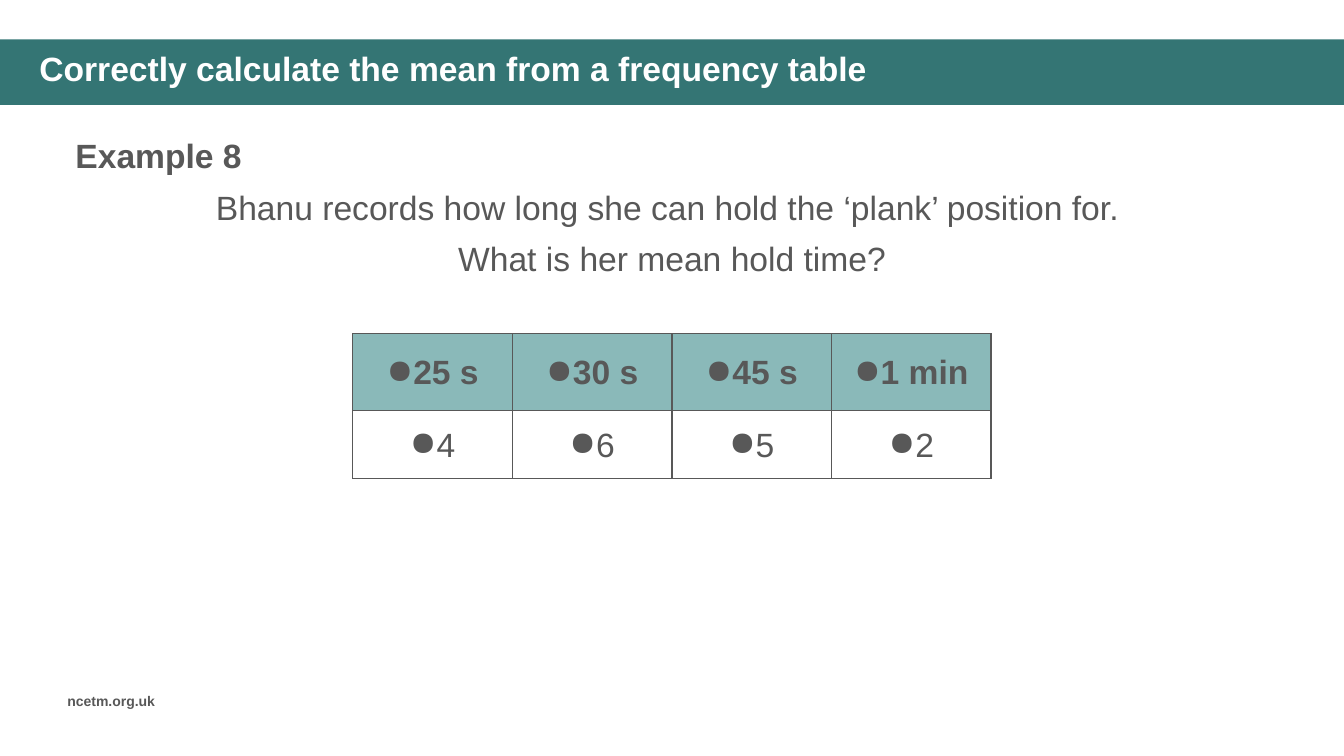
import pptx
import pptx.dml.color
import pptx.enum.shapes
import pptx.enum.text
import pptx.oxml.ns
import pptx.util
from lxml import etree
from pptx.util import Inches

TEAL = "347574"
PALE_TEAL = "8AB9B9"
GREY = "585858"
WHITE = "FFFFFF"
CENTER = pptx.enum.text.PP_ALIGN.CENTER
MIDDLE = pptx.enum.text.MSO_ANCHOR.MIDDLE
HOLD_TIMES = ["25\u00a0s", "30\u00a0s", "45\u00a0s", "1\u00a0min"]
FREQUENCIES = ["4", "6", "5", "2"]


def color(value):
    return pptx.dml.color.RGBColor.from_string(value)


def fill(target, value):
    target.fill.solid()
    target.fill.fore_color.rgb = color(value)


def style(paragraph, size=24, bold=False, value=GREY):
    font = paragraph.font
    font.name = "Arial"
    font.size = pptx.util.Pt(size)
    font.bold = bold
    font.color.rgb = color(value)


def add_xml(parent, tag, **attributes):
    return etree.SubElement(parent, pptx.oxml.ns.qn(tag), attributes)


def add_band(slide, width):
    band = slide.shapes.add_shape(pptx.enum.shapes.MSO_SHAPE.RECTANGLE, 0, Inches(0.39), width, Inches(0.65))
    band.shadow.inherit = False
    fill(band, TEAL)
    band.line.fill.background()
    tree = slide.shapes.title.element.getparent()
    tree.insert(2, band.element)


def set_title(slide, text):
    title = slide.shapes.title
    title.left, title.top = Inches(0.29), Inches(0.47)
    title.width, title.height = Inches(11.58), Inches(0.47)
    title.text_frame.text = text
    title.text_frame.vertical_anchor = MIDDLE
    heading = title.text_frame.paragraphs[0]
    heading.alignment = pptx.enum.text.PP_ALIGN.LEFT
    heading.line_spacing = 0.9
    style(heading, bold=True, value=WHITE)


def add_text(slide, lines, left, top, width, height, size=24, bold=False, align=None, gap=0):
    frame = slide.shapes.add_textbox(Inches(left), Inches(top), Inches(width), Inches(height)).text_frame
    frame.word_wrap = True
    frame.text = "\n".join(lines)
    for index, paragraph in enumerate(frame.paragraphs):
        paragraph.alignment = align
        paragraph.space_after = pptx.util.Pt(gap)
        if index:
            paragraph.space_before = pptx.util.Pt(gap)
        style(paragraph, size, bold)


def add_borders(cell):
    properties = cell._tc.get_or_add_tcPr()
    for index, side in enumerate(["a:lnL", "a:lnR", "a:lnT", "a:lnB"]):
        border = etree.Element(pptx.oxml.ns.qn(side), {"w": str(pptx.util.Pt(1))})
        properties.insert(index, border)
        add_xml(add_xml(border, "a:solidFill"), "a:srgbClr", val=GREY)


def fill_cell(cell, text, header):
    cell.text = text
    cell.vertical_anchor = MIDDLE
    cell.margin_left = cell.margin_right = Inches(0.07)
    cell.margin_top = cell.margin_bottom = 0
    if header:
        fill(cell, PALE_TEAL)
    else:
        cell.fill.background()
    add_borders(cell)
    paragraph = cell.text_frame.paragraphs[0]
    paragraph.alignment = CENTER
    paragraph.line_spacing = 1.07
    add_xml(paragraph._p.get_or_add_pPr(), "a:buChar", char="●")
    style(paragraph, bold=header)


def add_frequency_table(slide):
    rows = [HOLD_TIMES, FREQUENCIES]
    table = slide.shapes.add_table(
        len(rows), len(HOLD_TIMES), Inches(3.5), Inches(3.31), Inches(6.33), Inches(1.44)
    ).table
    table.horz_banding = False
    for row, height in zip(table.rows, [0.76, 0.68]):
        row.height = Inches(height)
    for row_index, values in enumerate(rows):
        for column_index, value in enumerate(values):
            fill_cell(table.cell(row_index, column_index), value, row_index == 0)


def main():
    deck = pptx.Presentation()
    deck.slide_width, deck.slide_height = Inches(13.33), Inches(7.5)
    slide = deck.slides.add_slide(deck.slide_layouts[5])
    add_band(slide, deck.slide_width)
    set_title(slide, "Correctly calculate the mean from a frequency table")
    add_text(slide, ["ncetm.org.uk"], 0.57, 6.82, 1.21, 0.27, size=10, bold=True)
    add_frequency_table(slide)
    question = [
        "Bhanu records how long she can hold the ‘plank’ position for. ",
        "What is her mean hold time?",
    ]
    add_text(slide, question, 1.02, 1.8, 11.29, 1.02, align=CENTER, gap=4)
    add_text(slide, ["Example 8"], 0.65, 1.29, 6.66, 0.5, bold=True)
    deck.save("out.pptx")


if __name__ == "__main__":
    main()
